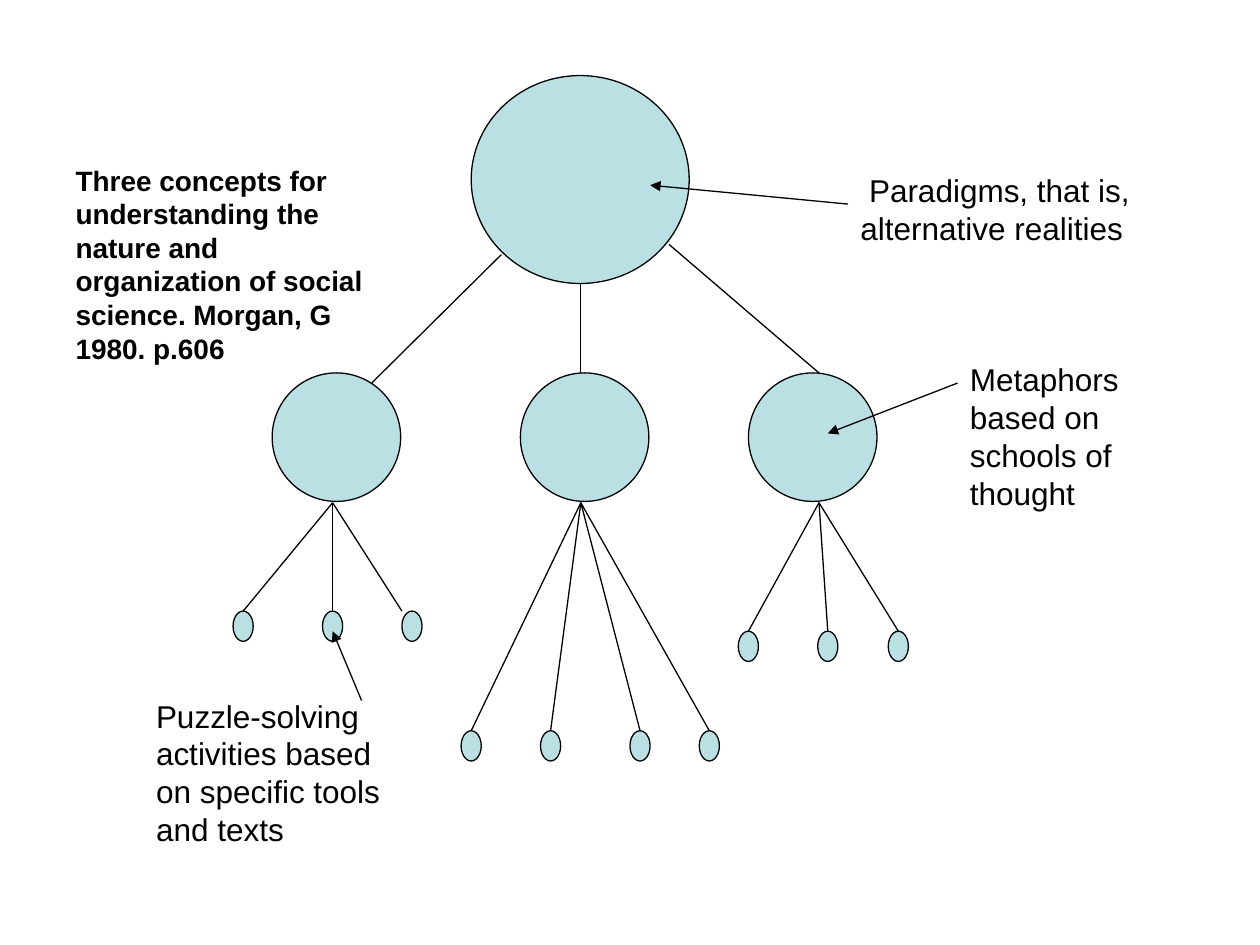
import pptx
import pptx.util
import pptx.dml.color
import pptx.enum.shapes
import pptx.enum.text
import pptx.oxml.ns
import lxml.etree

COLS, ROWS = 100, 75
CELL = 0.1
HUE = {"fill": "BBE0E3", "ink": "000000"}
HUB, LEAF = 10.2, (1.6, 2.4)
HUB_TOP, HUB_FOOT = 29.6, 39.9
FANS = [
    {"hub": 21.6, "root": 26.4, "row": 48.5,
     "leaves": [19.3, 26.4, 32.7], "tips": [19.3, 26.4, 31.9]},
    {"hub": 41.3, "root": 46.1, "row": 58,
     "leaves": [37.4, 43.7, 50.8, 56.3]},
    {"hub": 59.4, "root": 65, "row": 50.1,
     "leaves": [59.4, 65.7, 71.3]},
]
TRUNKS = [((39.8, 20.2), (29.5, 30.4)),
          ((53.1, 19.4), (65, HUB_TOP)),
          ((46.1, 22.5), (46.1, HUB_TOP))]
NOTES = [
    ("Puzzle-solving activities based on specific tools and texts",
     (11.4, 54.8, 21.3, 13), (28.7, 55.6), (26.4, 50.1)),
    (" Paradigms, that is, alternative realities",
     (67.3, 13.1, 23.6, 7), (67.3, 16.2), (51.6, 14.7)),
    ("Metaphors based on schools of thought",
     (76, 28.1, 19.7, 13), (76, 30.4), (65.7, 34.4)),
]
TITLE = ("Three concepts for understanding the nature and organization "
         "of social science. Morgan, G 1980. p.606")


def grid(*cells):
    """Turn grid cells into slide lengths."""
    return [pptx.util.Inches(cell * CELL) for cell in cells]


def tint(name):
    """Look up a colour by name."""
    return pptx.dml.color.RGBColor.from_string(HUE[name])


def put(thing, **values):
    """Set attributes from format values."""
    for name, value in values.items():
        setattr(thing, name, value)


def ink(line):
    """Give a line its thin dark stroke."""
    line.color.rgb = tint("ink")
    line.width = pptx.util.Pt(0.75)


def write(shape, text, size, bold, anchor):
    """Fill a shape with left-aligned text."""
    frame = shape.text_frame
    put(frame, text=text, word_wrap=True, vertical_anchor=anchor,
        auto_size=pptx.enum.text.MSO_AUTO_SIZE.NONE)
    para = frame.paragraphs[0]
    put(para, alignment=pptx.enum.text.PP_ALIGN.LEFT)
    put(para.font, name="Arial", size=pptx.util.Pt(size), bold=bold)
    para.font.color.rgb = tint("ink")


def disc(slide, left, top, width, height):
    """Draw a filled ellipse."""
    oval = pptx.enum.shapes.MSO_SHAPE.OVAL
    shape = slide.shapes.add_shape(oval, *grid(left, top, width, height))
    shape.shadow.inherit = False
    shape.fill.solid()
    shape.fill.fore_color.rgb = tint("fill")
    ink(shape.line)


def link(slide, start, end, arrow=False):
    """Draw a straight line, with an arrowhead at its end on request."""
    kind = pptx.enum.shapes.MSO_CONNECTOR.STRAIGHT
    line = slide.shapes.add_connector(kind, *grid(*start, *end))
    ink(line.line)
    name = pptx.oxml.ns.qn
    if arrow:
        stroke = line.line._get_or_add_ln()
        lxml.etree.SubElement(stroke, name("a:tailEnd"), type="triangle")
    lxml.etree.SubElement(line._element.spPr, name("a:effectLst"))


def fan(slide, hub, root, row, leaves, tips=None):
    """Draw a hub with its leaves and the lines between them."""
    disc(slide, hub, HUB_TOP, HUB, HUB)
    for leaf, tip in zip(leaves, tips or leaves):
        disc(slide, leaf - LEAF[0] / 2, row, *LEAF)
        link(slide, (root, HUB_FOOT), (tip, row))


def note(slide, text, box, start, end):
    """Add a label and the arrow that leads from it."""
    label = slide.shapes.add_textbox(*grid(*box))
    write(label, text, 18, False, pptx.enum.text.MSO_ANCHOR.TOP)
    link(slide, start, end, arrow=True)


def head(slide):
    """Place and format the title."""
    title = slide.shapes.title
    left, top, width, height = grid(5, 11.5, 26.9, 18.9)
    put(title, left=left, top=top, width=width, height=height)
    write(title, TITLE, 16, True, pptx.enum.text.MSO_ANCHOR.MIDDLE)


def main():
    """Build the slide and save it."""
    deck = pptx.Presentation()
    deck.slide_width, deck.slide_height = grid(COLS, ROWS)
    slide = deck.slides.add_slide(deck.slide_layouts[5])
    head(slide)
    disc(slide, 37.4, 6, 17.3, 16.5)
    for group in FANS:
        fan(slide, **group)
    for start, end in TRUNKS:
        link(slide, start, end)
    for item in NOTES:
        note(slide, *item)
    deck.save("out.pptx")


if __name__ == "__main__":
    main()
